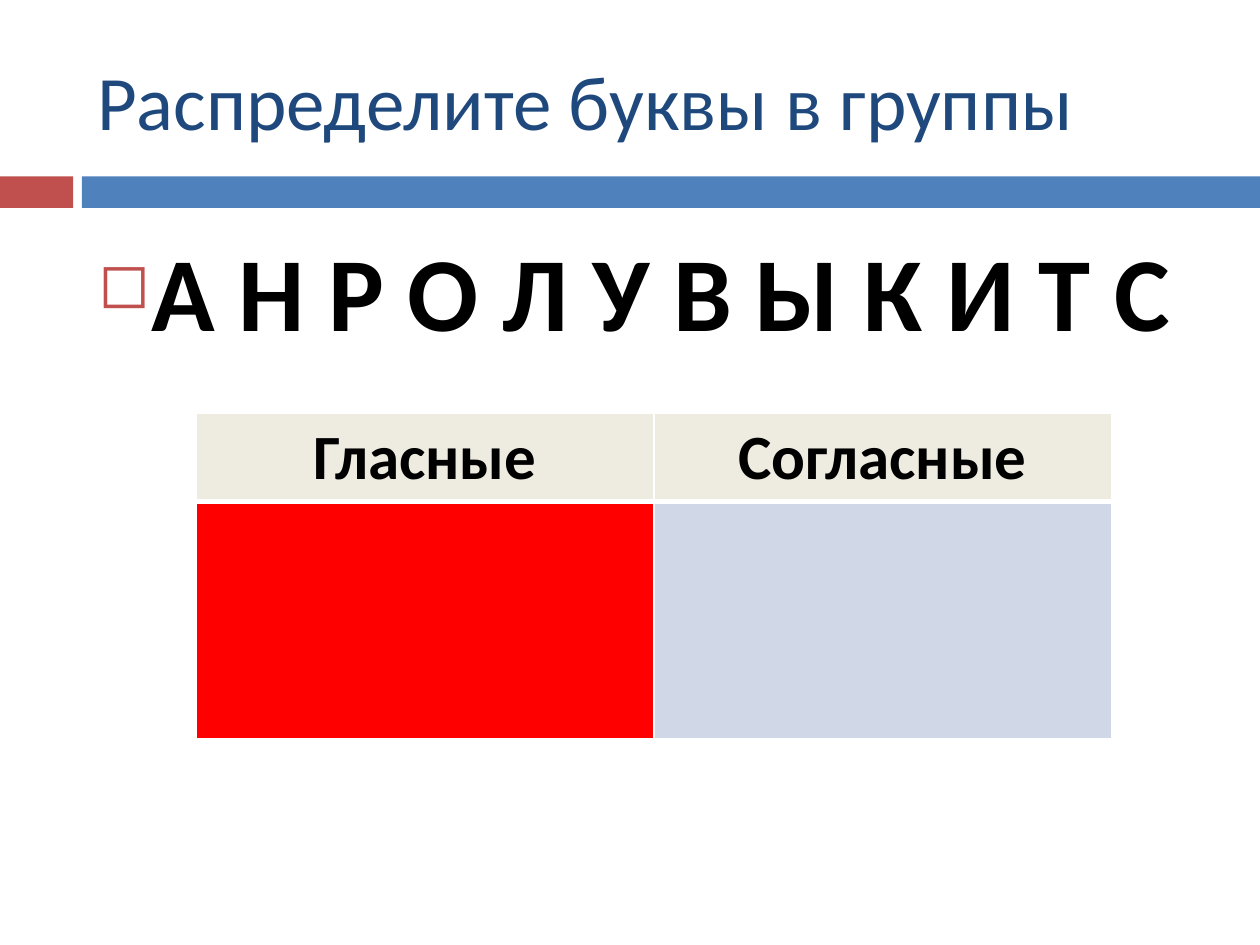
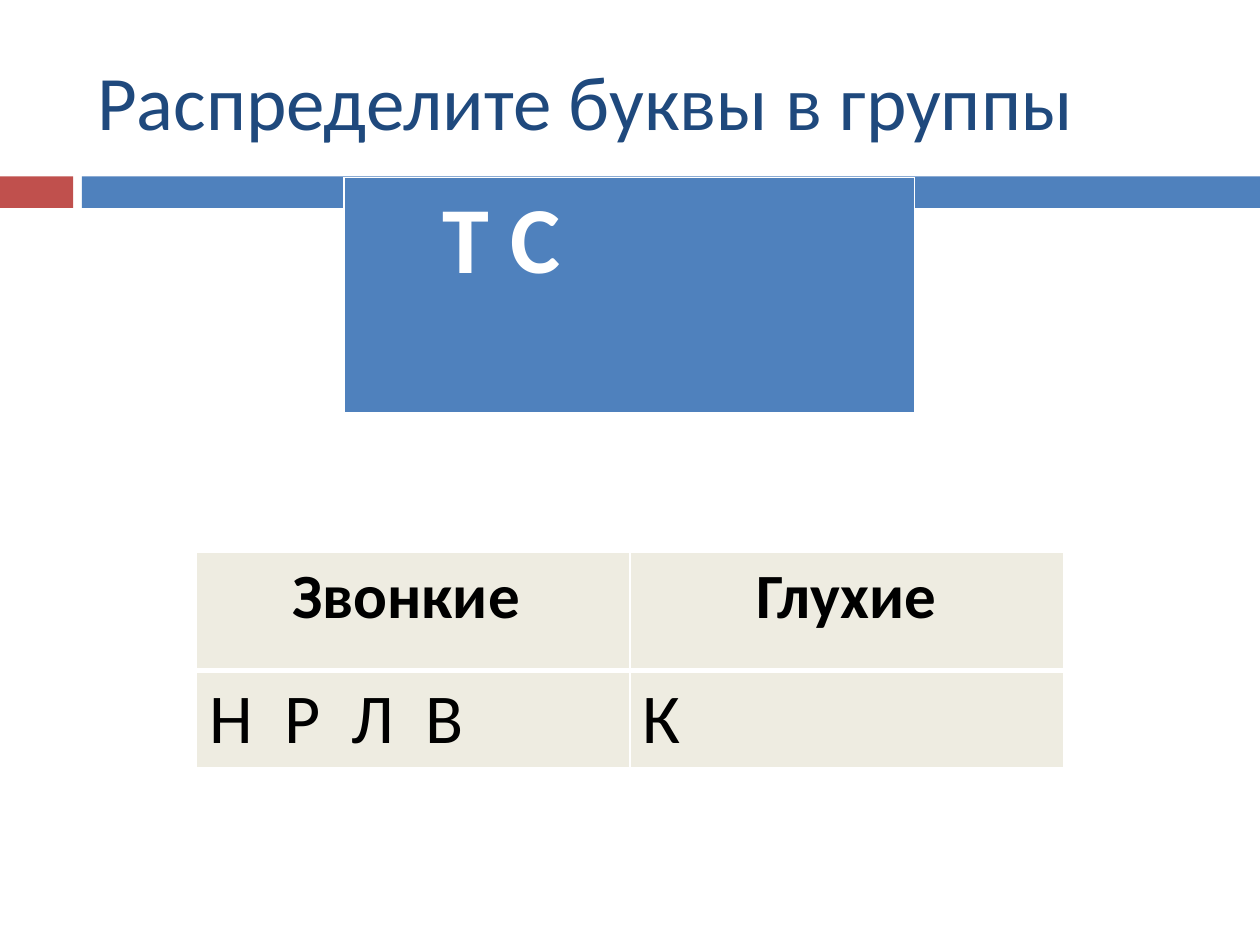
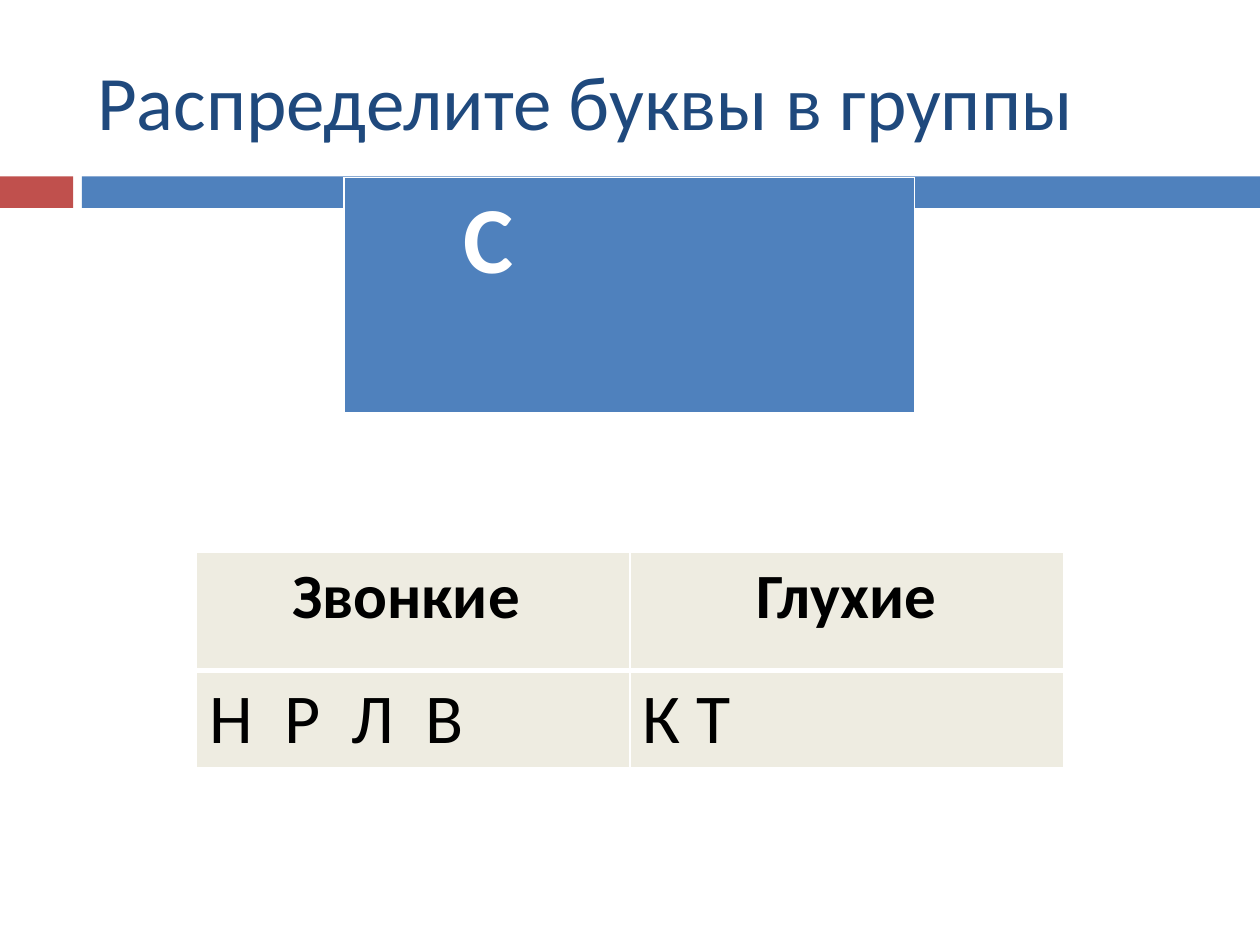
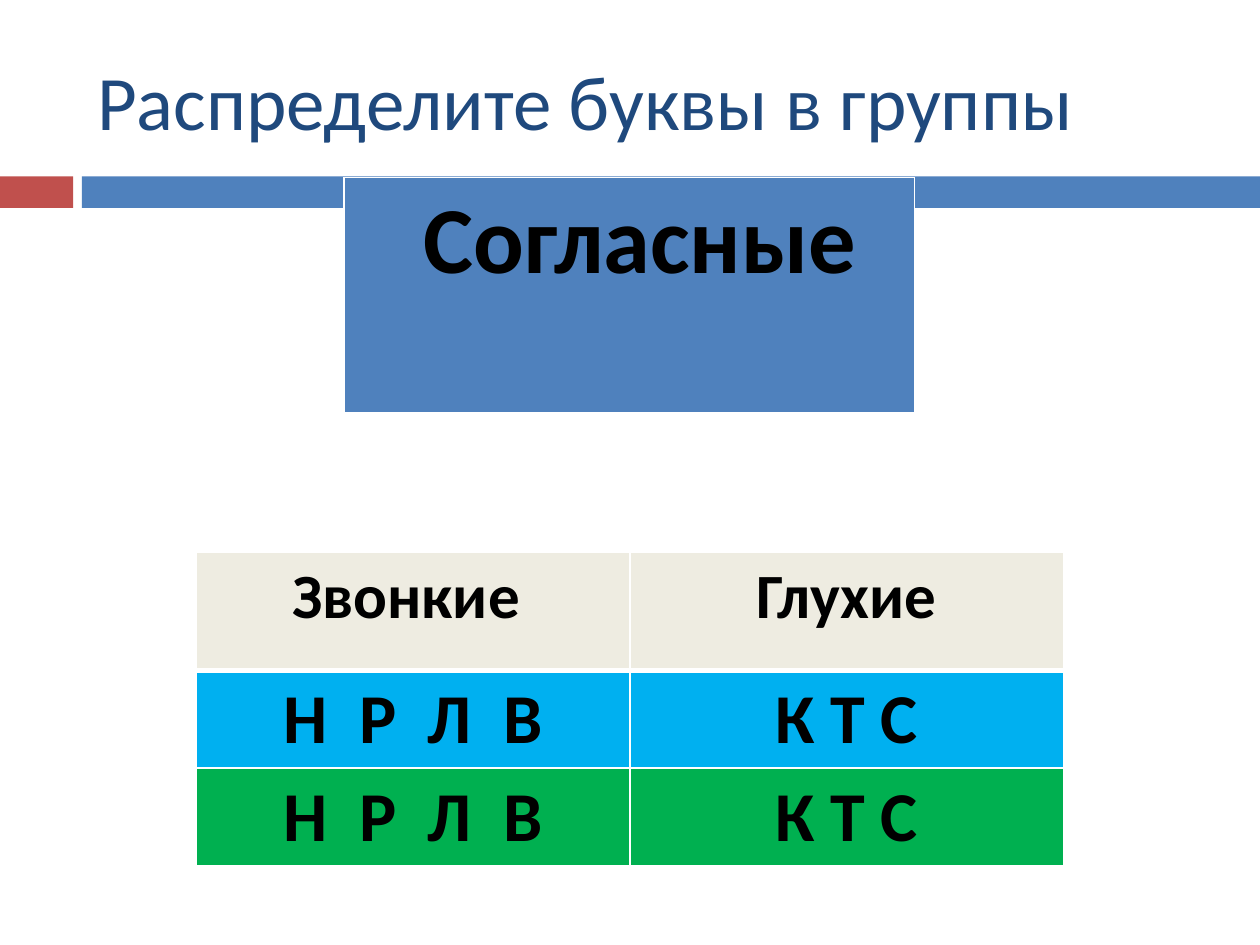
from lxml.etree import SubElement
from pptx import Presentation
from pptx.dml.color import RGBColor
from pptx.enum.shapes import MSO_SHAPE as Shape
from pptx.enum.text import MSO_ANCHOR as Anchor, PP_ALIGN as Align
from pptx.oxml.ns import qn
from pptx.util import Pt

PX = 9144  # EMU; 100 px to the inch
FONT = "Calibri"
TITLE = "Распределите буквы в группы"
TITLE_ONLY = 5
COLORS = {
    "white": "FFFFFF", "black": "000000", "navy": "1F497D",
    "blue": "4F81BD", "brick": "C0504D", "cream": "EEECE1",
    "red": "FF0000", "pale": "D0D8E8", "sky": "00B0F0", "green": "00B050",
}
HEADER = {"size": 36, "bold": True, "align": Align.CENTER}
LETTERS = {"size": 40}
BOLD_LETTERS = {"size": 40, "bold": True, "align": Align.CENTER}
BANNER = {"size": 54, "bold": True}
WIDE = 4.5  # points between characters of spread-out letters
VOICED = "Н Р Л В"


def px(*lengths):
    return [length * PX for length in lengths]


def rgb(name):
    return RGBColor.from_string(COLORS[name])


def write(frame, text, *, size, color="black", bold=False, align=Align.LEFT,
          indent=0, spread=0):
    para = frame.paragraphs[0]
    para.alignment = align
    if indent:
        para._p.get_or_add_pPr().set("marL", str(indent * PX))
    span = para.add_run()
    span.text = text
    font = span.font
    font.name, font.size, font.bold = FONT, Pt(size), bold
    font.color.rgb = rgb(color)
    if spread:
        span._r.get_or_add_rPr().set("spc", str(round(spread * 100)))
    return para


def add_bullet(para, char, color, percent, hang):
    props = para._p.get_or_add_pPr()
    props.set("indent", str(-hang * PX))
    SubElement(SubElement(props, qn("a:buClr")), qn("a:srgbClr"),
               val=COLORS[color])
    SubElement(props, qn("a:buSzPct"), val=str(percent * 1000))
    SubElement(props, qn("a:buChar"), char=char)


def add_borders(cell, top, bottom):
    """Draw white cell borders, one point wide at the sides."""
    props = cell._tc.get_or_add_tcPr()
    for side, width in zip("LRTB", (1, 1, top, bottom)):
        line = SubElement(props, qn(f"a:ln{side}"), w=str(Pt(width)))
        SubElement(SubElement(line, qn("a:solidFill")), qn("a:srgbClr"),
                   val=COLORS["white"])


def add_grid(slide, box, heights, rows):
    """Add a table of equal columns; each cell is (text, fill, format)."""
    left, top, width = box
    columns = len(rows[0])
    table = slide.shapes.add_table(
        len(rows), columns, *px(left, top, width, sum(heights))).table
    table.horz_banding = False
    for column in table.columns:
        column.width = width * PX // columns
    for r, (height, row) in enumerate(zip(heights, rows)):
        table.rows[r].height = height * PX
        for c, (text, fill, style) in enumerate(row):
            cell = table.cell(r, c)
            add_borders(cell, top=3 if r == 1 else 1, bottom=3 if r == 0 else 1)
            cell.fill.solid()
            cell.fill.fore_color.rgb = rgb(fill)
            if text:
                write(cell.text_frame, text, **style)


def add_bands(slide, layout):
    """Draw the two bands under the title and move them to the layout."""
    for number, (left, width, color) in enumerate(
            [(0, 58, "brick"), (65, 935, "blue")]):
        band = slide.shapes.add_shape(
            Shape.RECTANGLE, *px(left, 140, width, 25))
        band.shadow.inherit = False
        band.fill.solid()
        band.fill.fore_color.rgb = rgb(color)
        band.line.fill.background()
        band.element.nvSpPr.cNvPr.set("id", str(20 + number))
        layout.shapes.element.insert(2 + number, band.element)


def add_titled_slide(deck):
    slide = deck.slides.add_slide(deck.slide_layouts[TITLE_ONLY])
    title = slide.shapes.title
    title.left, title.top, title.width, title.height = px(67, 25, 892, 108)
    title.text_frame.vertical_anchor = Anchor.MIDDLE
    write(title.text_frame, TITLE, size=44, color="navy")
    return slide


def fill_alphabet_slide(slide):
    body = slide.shapes.add_textbox(*px(67, 175, 892, 492))
    body.text_frame.word_wrap = True
    para = write(body.text_frame, "А Н Р О Л У В Ы К И Т С ", size=60,
                 bold=True, align=Align.CENTER, indent=35)
    para.space_before = Pt(7)
    add_bullet(para, "◻", "brick", percent=60, hang=35)
    add_grid(slide, (156, 328, 726), (70, 188), [
        [("Гласные", "cream", HEADER), ("Согласные", "cream", HEADER)],
        [("", "red", {}), ("", "pale", {})],
    ])


def fill_consonant_slide(slide, banner, banner_style, answers, style):
    """Place the banner and the table; answers hold (voiceless, fill)."""
    add_grid(slide, (273, 141, 453), (188,),
             [[(banner, "blue", {**BANNER, **banner_style})]])
    rows = [[("Звонкие ", "cream", HEADER), ("Глухие", "cream", HEADER)]]
    for voiceless, fill in answers:
        rows.append([(VOICED, fill, {**style, "spread": WIDE}),
                     (voiceless, fill, style)])
    heights = [94] + [77] * len(answers)
    add_grid(slide, (156, 438, 688), heights, rows)


def main():
    deck = Presentation()
    deck.slide_width, deck.slide_height = px(1000, 750)

    first = add_titled_slide(deck)
    add_bands(first, deck.slide_layouts[TITLE_ONLY])
    fill_alphabet_slide(first)

    fill_consonant_slide(
        add_titled_slide(deck), "Т С", {"color": "white", "indent": 68},
        [("К", "cream")], LETTERS)
    fill_consonant_slide(
        add_titled_slide(deck), "С", {"color": "white", "indent": 85},
        [("К Т", "cream")], LETTERS)
    fill_consonant_slide(
        add_titled_slide(deck), " Согласные", {"align": Align.CENTER},
        [("К Т С", "sky"), ("К Т С", "green")], BOLD_LETTERS)

    deck.save("out.pptx")


if __name__ == "__main__":
    main()
